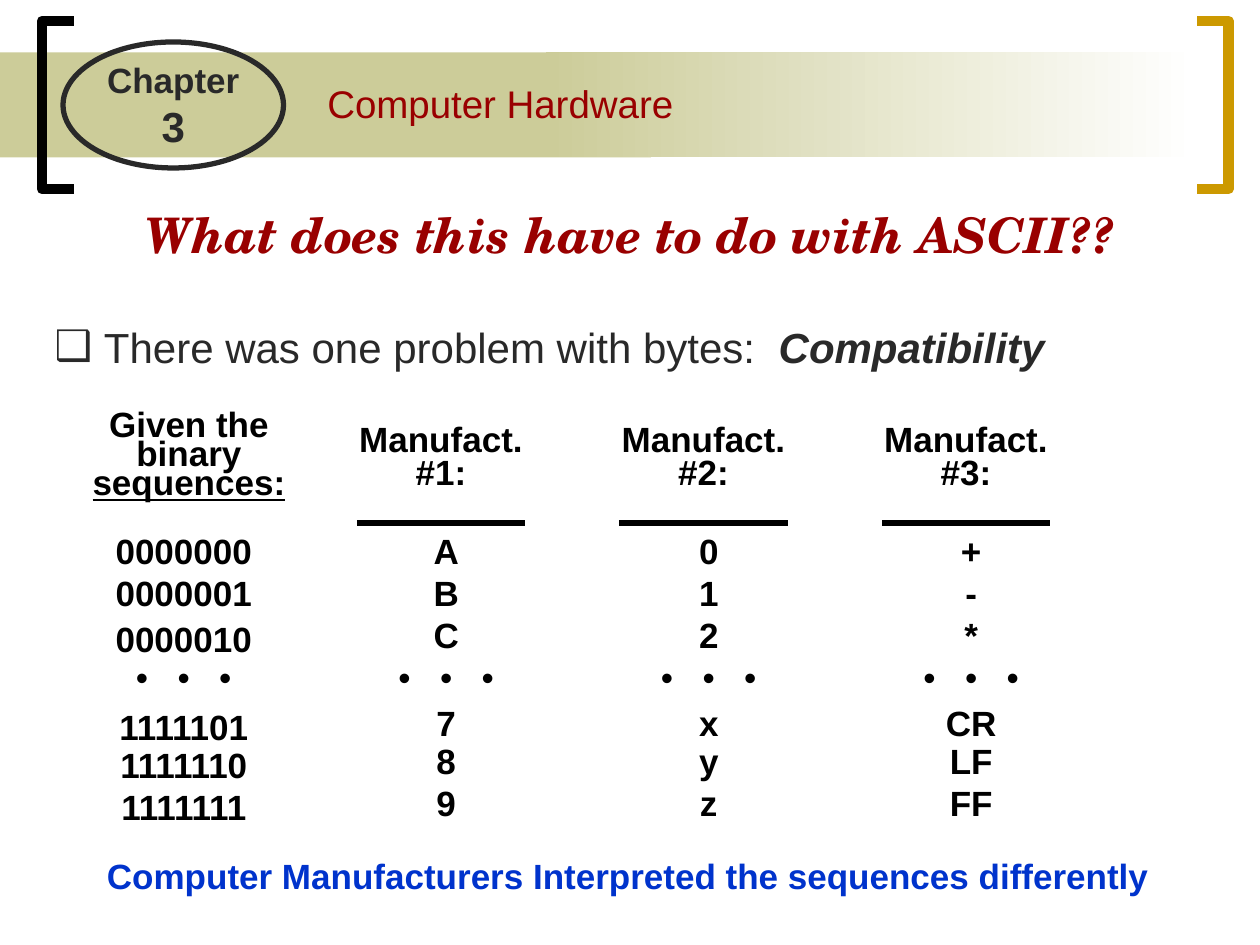
import pptx
import pptx.dml.color
import pptx.enum.dml
import pptx.enum.shapes
import pptx.enum.text
import pptx.oxml
import pptx.oxml.ns
import pptx.util
from lxml import etree

# The slide is a grid of 120 columns by 90 rows.
COLS, ROWS = 120, 90
CELL = pptx.util.Inches(10) / COLS

COLORS = {
    "band": "CCCC99",
    "white": "FFFFFF",
    "black": "000000",
    "gold": "CC9900",
    "dark": "292929",
    "red": "990000",
    "blue": "0033CC",
    "shadow": "808080",
}
CENTER = pptx.enum.text.PP_ALIGN.CENTER
SHAPES = pptx.enum.shapes.MSO_SHAPE
BOLD = {"size": 20, "bold": True, "color": "black"}
DOTS = {"size": 20, "color": "black", "spacing": 5.6}

ROW_TOPS = [49.8, 53.8, 57.8, 61.8, 66.2, 69.8, 73.8]
BINARY_SHIFTS = [0, 0, 0.4, 0, 0.4, 0.4, 0.4]
ELLIPSIS = "• • •"
BINARY = ["0000000", "0000001", "0000010", ELLIPSIS, "1111101", "1111110", "1111111"]
MANUFACTURERS = {
    "#1:": ["A", "B", "C", ELLIPSIS, "7", "8", "9"],
    "#2:": ["0", "1", "2", ELLIPSIS, "x", "y", "z"],
    "#3:": ["+", "-", "*", ELLIPSIS, "CR", "LF", "FF"],
}


def grid(*cells):
    return [pptx.util.Emu(round(c * CELL)) for c in cells]


def rgb(name):
    return pptx.dml.color.RGBColor.from_string(COLORS[name])


def sub(parent, tag, **attrs):
    return etree.SubElement(parent, pptx.oxml.ns.qn(tag), attrs)


def add_text_shadow(r):
    rPr = r._r.get_or_add_rPr()
    effects = etree.Element(pptx.oxml.ns.qn("a:effectLst"))
    shadow = sub(effects, "a:outerShdw", dist="35921", dir="2700000")
    sub(shadow, "a:srgbClr", val=COLORS["shadow"])
    rPr.find(pptx.oxml.ns.qn("a:solidFill")).addnext(effects)


def add_run(p, text, size, color, font="Arial", spacing=0, shadow=False, **style):
    r = p.add_run()
    r.text = text
    for name, value in {"size": pptx.util.Pt(size), "name": font, **style}.items():
        setattr(r.font, name, value)
    r.font.color.rgb = rgb(color)
    if spacing:
        r._r.get_or_add_rPr().set("spc", str(round(spacing * 100)))
    if shadow:
        add_text_shadow(r)


def fill_text(sp, paragraphs, align=None, line_spacing=1.0, wrap=True):
    """Write paragraphs, each a list of (text, format) runs."""
    tf = sp.text_frame
    tf.word_wrap = wrap
    tf.auto_size = pptx.enum.text.MSO_AUTO_SIZE.NONE
    tf.vertical_anchor = pptx.enum.text.MSO_ANCHOR.TOP
    for i, runs in enumerate(paragraphs):
        p = tf.add_paragraph() if i else tf.paragraphs[0]
        p.alignment = align
        p.line_spacing = line_spacing
        p.space_before = pptx.util.Pt(0)
        for text, style in runs:
            add_run(p, text, **style)


def add_text(s, box, paragraphs, **layout):
    fill_text(s.shapes.add_textbox(*grid(*box)), paragraphs, **layout)


def place(sp, box):
    sp.left, sp.top, sp.width, sp.height = grid(*box)


def add_band(s, left, fade=False):
    sp = s.shapes.add_shape(SHAPES.RECTANGLE, *grid(left, 5, 62, 10))
    sp.shadow.inherit = False
    sp.line.fill.background()
    if fade:
        sp.fill.gradient()
        sp.fill.gradient_angle = 0
        for stop, color in zip(sp.fill.gradient_stops, ("band", "white")):
            stop.color.rgb = rgb(color)
    else:
        sp.fill.solid()
        sp.fill.fore_color.rgb = rgb("band")


def outline(sp, color, width):
    sp.shadow.inherit = False
    sp.fill.background()
    sp.line.color.rgb = rgb(color)
    sp.line.width = pptx.util.Pt(width)


def add_bracket(s, tip, spine, color):
    points = [grid(*pt) for pt in ((tip, 2), (spine, 2), (spine, 18), (tip, 18))]
    builder = s.shapes.build_freeform(*points[0])
    builder.add_line_segments(points[1:], close=False)
    outline(builder.convert_to_shape(), color, 6)


def add_rule(s, left, top, width):
    line = s.shapes.add_connector(
        pptx.enum.shapes.MSO_CONNECTOR.STRAIGHT, *grid(left, top, left + width, top))
    line.line.color.rgb = rgb("black")
    line.line.width = pptx.util.Pt(3)
    sub(line._element.spPr, "a:effectLst")


def add_banner(s):
    add_band(s, 0)
    add_band(s, 52, fade=True)
    add_bracket(s, 7, 4, "black")
    add_bracket(s, 114, 117, "gold")
    outline(s.shapes.add_shape(SHAPES.OVAL, *grid(6, 4, 21, 12)), "dark", 3)
    chapter = {"bold": True, "color": "dark", "shadow": True}
    add_text(s, (9, 5, 15, 10),
             [[("Chapter", {"size": 20, **chapter})], [("3", {"size": 24, **chapter})]],
             align=CENTER, wrap=False)
    add_text(s, (30, 7, 85, 5.6),
             [[("Computer Hardware", {"size": 22, "color": "red", "shadow": True})]])


def add_heading(s):
    place(s.shapes.title, (0, 20, COLS, 5.6))
    style = {"size": 28, "color": "red", "font": "TeX Gyre Schola",
             "bold": True, "italic": True}
    fill_text(s.shapes.title, [[("What does this have to do with ASCII??", style)]],
              align=CENTER, line_spacing=0.8)


def add_problem(s):
    body = s.placeholders[1]
    place(body, (4, 30, 112, 6))
    style = {"size": 24, "color": "dark"}
    fill_text(body, [[("There was one problem with bytes:", style),
                      (" ", {**style, "spacing": 6.7}),
                      ("Compatibility", {**style, "bold": True, "italic": True})]])
    pPr = body.text_frame.paragraphs[0]._p.get_or_add_pPr()
    indent = grid(4.7)[0]
    pPr.set("marL", str(indent))
    pPr.set("indent", str(-indent))
    sub(pPr, "a:buChar", char="❑")


def add_column(s, center, width, values, shifts):
    for top, shift, value in zip(ROW_TOPS, shifts, values):
        dots = value == ELLIPSIS
        w = 15 if dots else width
        add_text(s, (center - w / 2, top + shift, w, 5.2),
                 [[(value, DOTS if dots else BOLD)]], align=CENTER)


def add_code_columns(s):
    add_text(s, (5, 38.8, 26, 9.6),
             [[("Given the binary ", BOLD), ("sequences:", {**BOLD, "underline": True})]],
             align=CENTER, line_spacing=0.7)
    add_column(s, 17.5, 21, BINARY, BINARY_SHIFTS)
    for i, (number, values) in enumerate(MANUFACTURERS.items()):
        center = 42.5 + 25 * i
        add_text(s, (center - 11.5, 39.9, 22, 7.7),
                 [[("Manufact.", BOLD)], [(number, BOLD)]],
                 align=CENTER, line_spacing=0.8)
        add_rule(s, center - 8.5, 49.8, 16)
        add_column(s, center, 13, values, [0] * len(values))


def main():
    prs = pptx.Presentation()
    prs.slide_width, prs.slide_height = grid(COLS, ROWS)
    s = prs.slides.add_slide(prs.slide_layouts[1])
    add_banner(s)
    add_heading(s)
    add_problem(s)
    add_code_columns(s)
    add_text(s, (9, 80.8, 104, 5.2),
             [[("Computer Manufacturers Interpreted the sequences differently",
                {**BOLD, "color": "blue"})]])
    prs.save("out.pptx")


if __name__ == "__main__":
    main()
